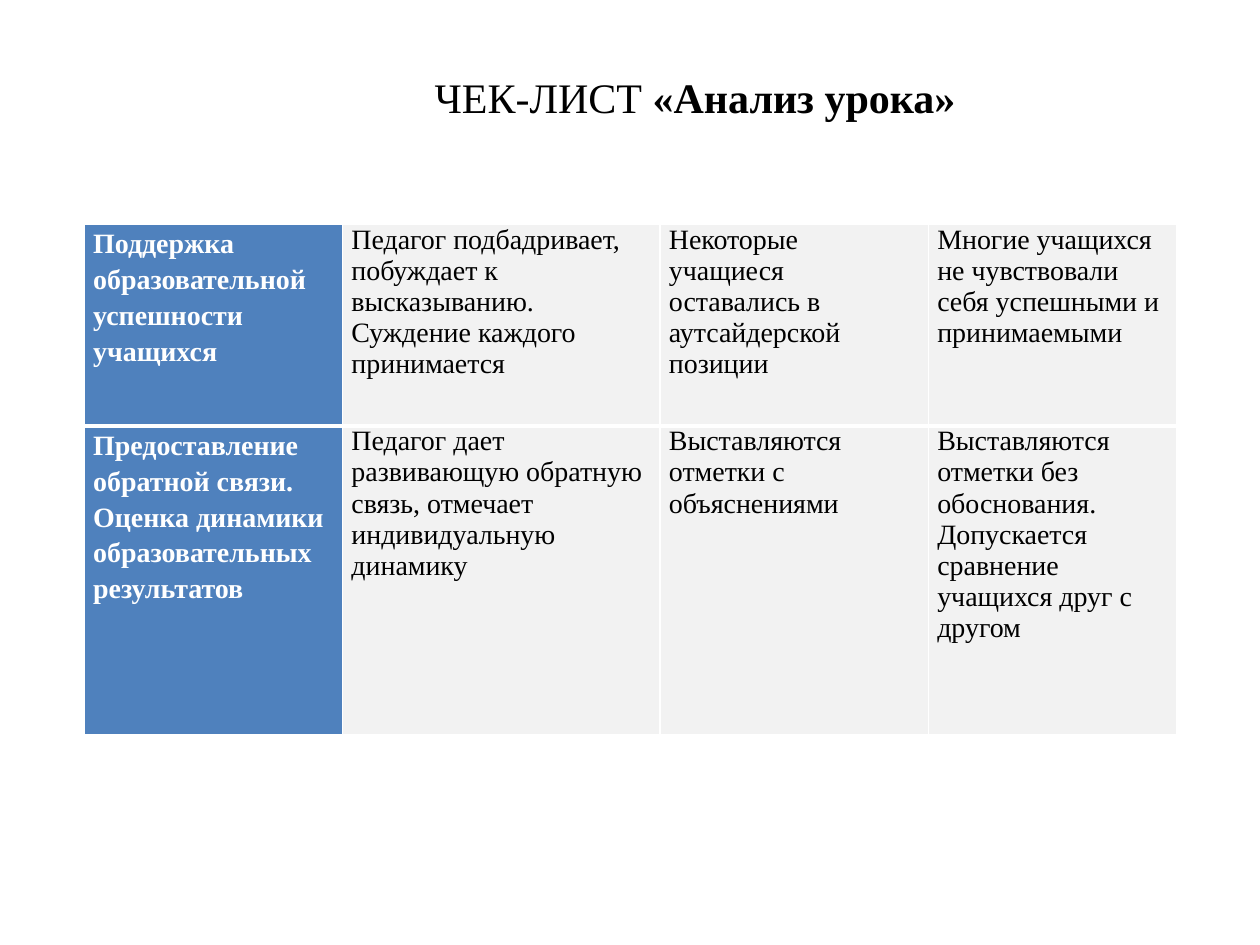
"""Build the lesson analysis checklist slide."""
from pptx import Presentation
from pptx import util as u
from pptx.dml.color import RGBColor
from pptx.enum import text
from pptx.oxml import parse_xml
from pptx.oxml.ns import nsdecls

ROWS = [
    ["Поддержка образовательной успешности учащихся",
     "Педагог подбадривает, побуждает к высказыванию. Суждение каждого принимается",
     "Некоторые учащиеся оставались в аутсайдерской позиции",
     "Многие учащихся не чувствовали себя успешными и принимаемыми"],
    ["Предоставление обратной связи. Оценка динамики образовательных результатов",
     "Педагог дает развивающую обратную связь, отмечает индивидуальную динамику",
     "Выставляются отметки с объяснениями",
     "Выставляются отметки без обоснования. Допускается сравнение учащихся друг с другом"],
]
COLUMN_WIDTHS = [2.05, 2.52, 2.13, 1.97]
ROW_HEIGHTS = [1.6, 2.45]


def color(value):
    return RGBColor.from_string(value)


def add_span(para, wording, *, size, font, fill, bold=False):
    span = para.add_run()
    span.text = wording
    span.font.size = u.Pt(size)
    span.font.name = font
    span.font.bold = bold
    span.font.color.rgb = color(fill)


class Checklist:
    font = "Times New Roman"
    dark, light = "000000", "FFFFFF"
    header_fill, body_fill = "4F81BD", "F2F2F2"
    title_size, cell_size = 24, 16

    def __init__(self, deck):
        self.page = deck.slides.add_slide(deck.slide_layouts[5])

    def title(self, spans, left, top, width, height):
        box = self.page.shapes.title
        box.left, box.top = u.Inches(left), u.Inches(top)
        box.width, box.height = u.Inches(width), u.Inches(height)
        frame = box.text_frame
        frame.word_wrap = False
        frame.auto_size = text.MSO_AUTO_SIZE.SHAPE_TO_FIT_TEXT
        frame.vertical_anchor = text.MSO_ANCHOR.TOP
        para = frame.paragraphs[0]
        para.alignment = text.PP_ALIGN.LEFT
        for wording, bold in spans:
            add_span(para, wording, size=self.title_size, font=self.font,
                     fill=self.dark, bold=bold)

    def borders(self, cell, **widths):
        properties = cell._tc.get_or_add_tcPr()
        for side, width in widths.items():
            properties.append(parse_xml(
                f'<a:ln{side} {nsdecls("a")} w="{u.Pt(width)}"><a:solidFill>'
                f'<a:srgbClr val="{self.light}"/></a:solidFill></a:ln{side}>'))

    def cell(self, cell, wording, header, **widths):
        cell.margin_left = cell.margin_right = u.Inches(0.07)
        cell.margin_top = cell.margin_bottom = 0
        self.borders(cell, **widths)
        cell.fill.solid()
        cell.fill.fore_color.rgb = color(self.header_fill if header else self.body_fill)
        para = cell.text_frame.paragraphs[0]
        if header:
            para.line_spacing = 1.15
        add_span(para, wording, size=self.cell_size, font=self.font,
                 fill=self.light if header else self.dark, bold=header)

    def table(self, rows, left, top, widths, heights):
        table = self.page.shapes.add_table(
            len(rows), len(widths), u.Inches(left), u.Inches(top),
            u.Inches(sum(widths)), u.Inches(sum(heights))).table
        table.first_row = table.horz_banding = False
        for column, width in zip(table.columns, widths):
            column.width = u.Inches(width)
        for index, (row, height) in enumerate(zip(rows, heights)):
            table.rows[index].height = u.Inches(height)
            above = 3 if index else 1
            below = 3 if index < len(rows) - 1 else 1
            for number, wording in enumerate(row):
                self.cell(table.cell(index, number), wording, number == 0,
                          L=1, R=1, T=above, B=below)


def main():
    deck = Presentation()
    deck.slide_width, deck.slide_height = u.Inches(10), u.Inches(7.5)
    checklist = Checklist(deck)
    checklist.title([("ЧЕК-ЛИСТ", False), (" «Анализ урока»", True)],
                    3.35, 0.52, 4.38, 0.5)
    checklist.table(ROWS, 0.67, 1.78, COLUMN_WIDTHS, ROW_HEIGHTS)
    deck.save("out.pptx")


if __name__ == "__main__":
    main()
